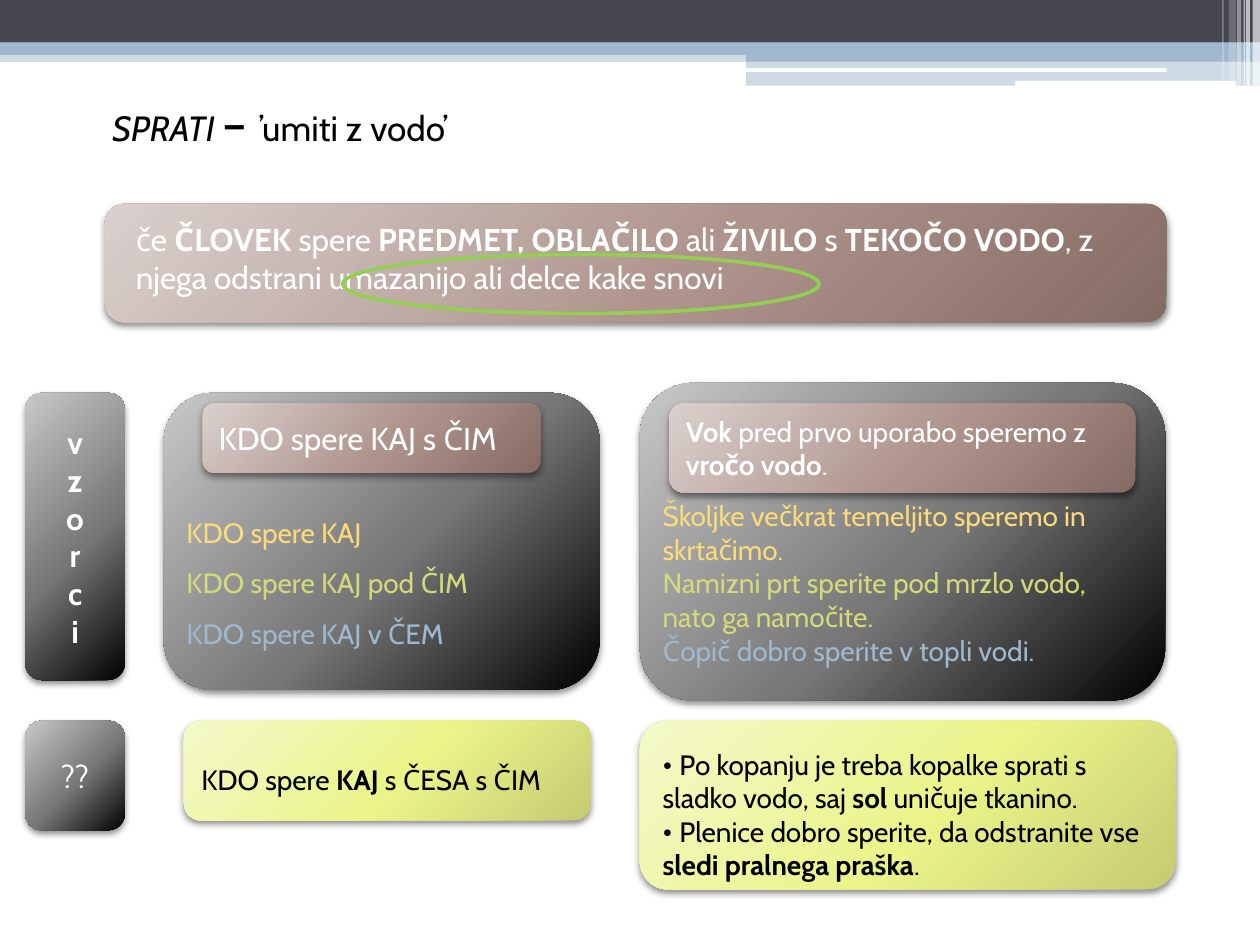
from lxml.etree import SubElement
from pptx import Presentation
from pptx.dml.color import RGBColor
from pptx.enum.shapes import MSO_SHAPE
from pptx.enum.text import MSO_ANCHOR, PP_ALIGN
from pptx.oxml import parse_xml
from pptx.oxml.ns import nsdecls, qn
from pptx.util import Cm, Pt

COLORS = {
    "white": "FFFFFF", "black": "000000", "slate": "464653", "blue": "9FB8CD",
    "yellow": "FADA7A", "green": "D2DA7A", "ring": "92D050",
}
GRADS = {
    "brown": ("DAD0CE", "AF948D", "846B63"),
    "grey": ("C8C8C8", "767676", "000000"),
    "lime": ("F4F9CA", "EAF489", "C4CB72"),
}
FONT, DOT = "Cabin", "Times New Roman"

# Header bars: left, top, width, height, colour, opacity, rounded
BARS = [
    (0, 1.02, 25.4, 0.23, "blue", 50, False),
    (0, 0, 25.4, 0.86, "slate", 100, False),
    (0, 0.86, 25.4, 0.25, "blue", 100, False),
    (15.04, 0.99, 10.36, 0.25, "blue", 100, False),
    (15.04, 1.22, 10.36, 0.51, "blue", 50, False),
    (15.01, 1.37, 8.51, 0.08, "white", 100, True),
    (20.47, 1.63, 4.45, 0.1, "white", 100, True),
]
# Corner stripes: left, width, height, opacity
STRIPES = [
    (25.25, 0.15, 1.73, 65), (25.12, 0.08, 1.73, 65), (25.07, 0.03, 1.73, 60),
    (24.94, 0.08, 1.73, 40), (24.77, 0.15, 1.63, 20), (24.64, 0.03, 1.63, 30),
]
# Heading runs: text, size, italic
HEAD = [("SPRATI ", 20, True), ("– ", 28, False), ("’umiti z vodo’", 20, False)]

# Cards and texts, back to front: box, gradient (None for a plain text box),
# size, line spacing, alignment, lines of (text, colour); * switches bold
LEFT, MID = PP_ALIGN.LEFT, PP_ALIGN.CENTER
PARTS = [
    ((2.11, 4.11, 21.41, 2.39), "brown", 18, 1, LEFT, []),
    ((2.49, 4.32, 20.4, 1.8), None, 18, 1, LEFT, [
        ("če *ČLOVEK *spere *PREDMET, OBLAČILO *ali* ŽIVILO *s *TEKOČO VODO*, z "
         "njega odstrani umazanijo ali delce kake snovi", "white")]),
    ((3.3, 7.92, 8.79, 5.99), "grey", 16, 1, LEFT, []),
    ((4.09, 8.13, 6.81, 1.4), "brown", 18, 1, LEFT, [
        ("KDO spere KAJ s ČIM", "white")]),
    ((3.51, 9.93, 8.41, 3.33), None, 16, 1.5, LEFT, [
        ("KDO spere KAJ", "yellow"),
        ("KDO spere KAJ pod ČIM", "green"),
        ("KDO spere KAJ v ČEM", "blue")]),
    ((0.51, 7.92, 2.01, 5.79), "grey", 18, 1, MID, [
        (f"*{letter}", "white") for letter in "vzorci"]),
    ((12.9, 7.72, 10.59, 6.4), "grey", 16, 1, LEFT, []),
    ((13.11, 9.93, 10.01, 3.68), None, 16, 1, LEFT, [
        ("Školjke večkrat temeljito speremo in skrtačimo.", "yellow"),
        ("Namizni prt sperite pod mrzlo vodo, nato ga namočite.", "green"),
        ("Čopič dobro sperite v topli vodi.", "blue")]),
    ((13.49, 8.13, 9.4, 1.8), "brown", 16, 1, LEFT, [
        ("*Vok* pred prvo uporabo speremo z *vročo vodo*.", "white")]),
    ((0.51, 14.53, 2.01, 2.21), "grey", 18, 1, MID, [("??", "white")]),
    ((3.71, 14.53, 8.2, 2.01), "lime", 16, 1.5, LEFT, [
        ("KDO spere *KAJ *s ČESA s ČIM", "black")]),
    ((12.9, 14.53, 10.8, 3.4), "lime", 16, 1, LEFT, []),
    ((13.11, 14.94, 10.59, 3), None, 16, 1, LEFT, [
        ("• Po kopanju je treba kopalke sprati s sladko vodo, saj *sol *uničuje "
         "tkanino.", "black"),
        ("• Plenice dobro sperite, da odstranite vse *sledi pralnega praška*.",
         "black")]),
]
RING = (6.91, 5.13, 9.6, 1.19)


def rgb(name):
    return RGBColor.from_string(COLORS[name])


def add_shape(slide, kind, box):
    shape = slide.shapes.add_shape(kind, *map(Cm, box))
    shape.shadow.inherit = False
    return shape


def add_bar(slide, box, color, alpha, round_ends=False):
    kind = MSO_SHAPE.ROUNDED_RECTANGLE if round_ends else MSO_SHAPE.RECTANGLE
    bar = add_shape(slide, kind, box)
    bar.fill.solid()
    bar.fill.fore_color.rgb = rgb(color)
    bar.line.fill.background()
    if alpha < 100:
        tint = bar.fill._xPr.find(".//" + qn("a:srgbClr"))
        SubElement(tint, qn("a:alpha"), val=str(alpha * 1000))


def add_card(slide, box, grad):
    card = add_shape(slide, MSO_SHAPE.ROUNDED_RECTANGLE, box)
    card.line.fill.background()
    stops = "".join(
        f'<a:gs pos="{pos * 1000}"><a:srgbClr val="{color}"/></a:gs>'
        for pos, color in zip((0, 55, 100), GRADS[grad]))
    props = card._element.spPr
    props.find(qn("a:prstGeom")).addnext(parse_xml(
        f'<a:gradFill {nsdecls("a")} rotWithShape="1"><a:gsLst>{stops}</a:gsLst>'
        '<a:path path="circle"><a:fillToRect l="-40000" t="-90000" r="140000" '
        'b="190000"/></a:path></a:gradFill>'))
    props.find(qn("a:effectLst")).append(parse_xml(
        f'<a:outerShdw {nsdecls("a")} blurRad="{Pt(4)}" dist="{Pt(2)}" '
        'dir="5400000" rotWithShape="0"><a:srgbClr val="000000">'
        '<a:alpha val="45000"/></a:srgbClr></a:outerShdw>'))
    card.text_frame.vertical_anchor = MSO_ANCHOR.MIDDLE
    return card


def write(frame, lines, size, gap, align):
    frame.word_wrap = True
    for num, (text, color) in enumerate(lines):
        para = frame.add_paragraph() if num else frame.paragraphs[0]
        para.alignment, para.line_spacing = align, gap
        para.font.name, para.font.size = FONT, Pt(size)
        para.font.color.rgb = rgb(color)
        if text.startswith("• "):
            dot = para.add_run()
            dot.text, dot.font.name = "• ", DOT
            text = text[2:]
        for turn, piece in enumerate(text.split("*")):
            if piece:
                run = para.add_run()
                run.text, run.font.bold = piece, turn % 2 == 1


def add_head(slide):
    slide.shapes.title._element.getparent().remove(slide.shapes.title._element)
    body = slide.placeholders[1]
    body.left, body.top, body.width, body.height = map(Cm, (1.7, 1.73, 22.61, 16.54))
    para = body.text_frame.paragraphs[0]
    para.space_before = Pt(3)
    para.font.name, para.font.color.rgb = FONT, rgb("black")
    props = para._p.get_or_add_pPr()
    props.set("marL", str(Cm(1.02)))
    props.set("indent", str(Cm(-0.71)))
    props.find(qn("a:defRPr")).addprevious(parse_xml(f'<a:buNone {nsdecls("a")}/>'))
    for text, size, slant in HEAD:
        run = para.add_run()
        run.text, run.font.size, run.font.italic = text, Pt(size), slant


def main():
    deck = Presentation()
    deck.slide_width, deck.slide_height = Cm(25.4), Cm(19.05)
    slide = deck.slides.add_slide(deck.slide_layouts[1])

    # Header
    for *box, color, alpha, round_ends in BARS:
        add_bar(slide, box, color, alpha, round_ends)
    for left, width, height, alpha in STRIPES:
        add_bar(slide, (left, 0, width, height), "white", alpha)
    add_head(slide)

    # Cards and texts
    for box, grad, size, gap, align, lines in PARTS:
        if grad:
            part = add_card(slide, box, grad)
        else:
            part = slide.shapes.add_textbox(*map(Cm, box))
        write(part.text_frame, lines, size, gap, align)

    # Ring around the key words
    ring = add_shape(slide, MSO_SHAPE.OVAL, RING)
    ring.fill.background()
    ring.line.color.rgb, ring.line.width = rgb("ring"), Pt(2)

    deck.save("out.pptx")


if __name__ == "__main__":
    main()
